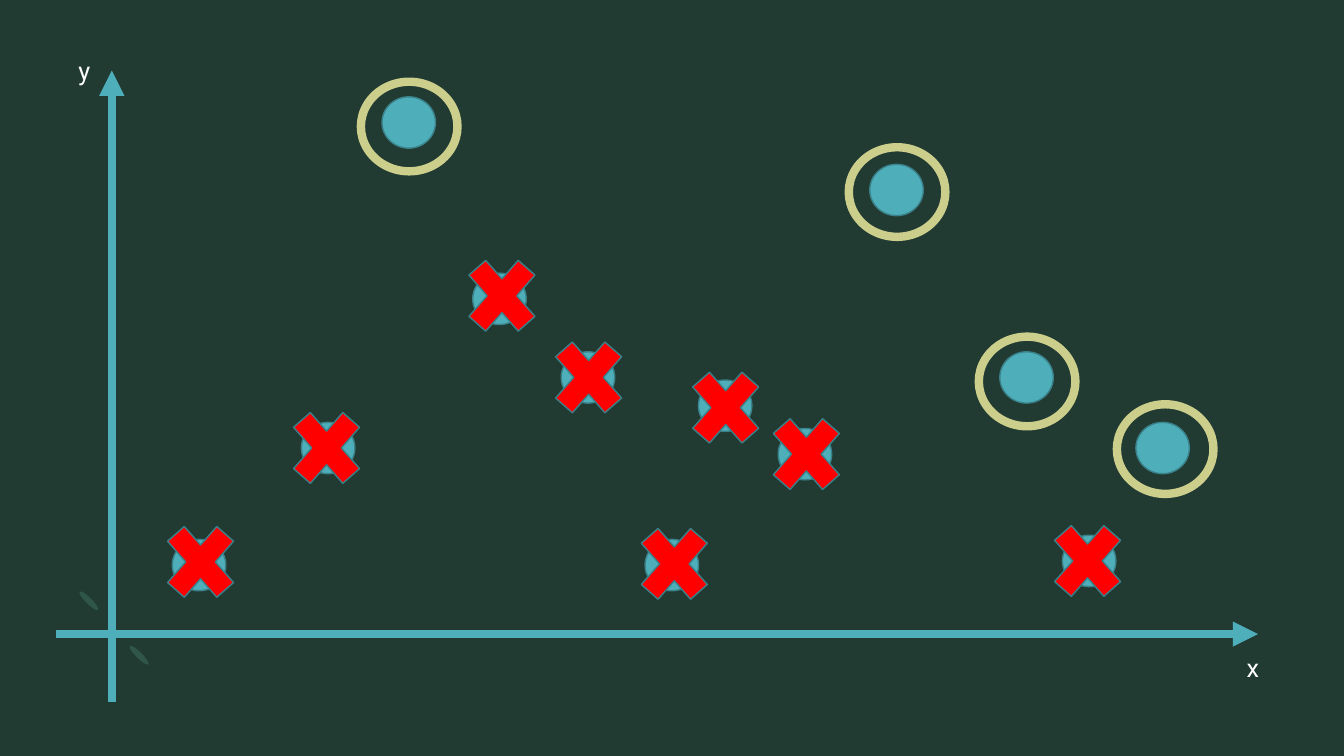
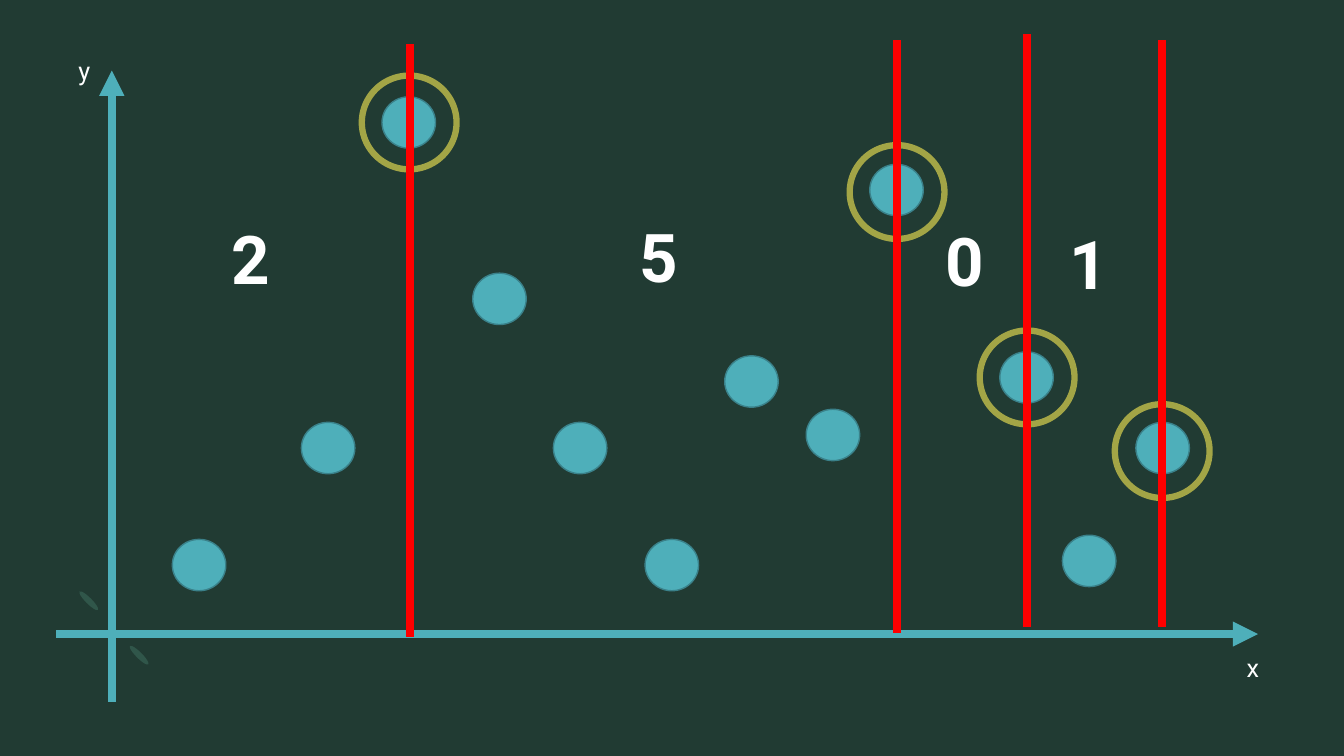
from lxml import etree
from pptx import Presentation
from pptx import util as u
from pptx.dml.color import RGBColor
from pptx.enum import shapes, text
from pptx.oxml import ns

PEAKS = [(292, 87.5), (640.4, 135.7), (733.3, 269.6), (830.5, 320)]
LOW_POINTS = [(142.2, 403.6), (234.4, 320), (356.8, 213.5), (479.9, 403.6), (778, 400.7)]


def color(value):
    return RGBColor.from_string(value)


class Plot:
    FONT = "Roboto"
    BACKGROUND = "213B33"
    WHITE = "FFFFFF"
    TEAL = "4EAFBA"
    DARK_TEAL = "3A818A"
    PALE_YELLOW = "CCCE8B"
    OLIVE = "A3A546"
    RED = "FF0000"
    LEAF = "30564A"
    THICK = 6

    def __init__(self):
        self.presentation = Presentation()
        self.presentation.slide_width = u.Pt(960)
        self.presentation.slide_height = u.Pt(540)
        fill = self.presentation.slide_master.background.fill
        fill.solid()
        fill.fore_color.rgb = color(self.BACKGROUND)
        self.slide = None

    def new_slide(self):
        self.slide = self.presentation.slides.add_slide(self.presentation.slide_layouts[6])
        for center in [(63.4, 429.1), (99.4, 468)]:
            self.shape("OVAL", center, (4.3, 18.7), fill=self.LEAF).rotation = 135
        self.line((79.9, 501.1), (79.9, 50.4), self.TEAL, arrow=True)
        self.line((40.3, 452.9), (898.6, 452.9), self.TEAL, arrow=True)
        self.label("x", 883.4, 462.2)
        self.label("y", 49, 36)

    def shape(self, kind, center, size, fill=None, outline=None, weight=1):
        (x, y), (width, height) = center, size
        shape = self.slide.shapes.add_shape(
            shapes.MSO_SHAPE[kind],
            u.Pt(x - width / 2), u.Pt(y - height / 2), u.Pt(width), u.Pt(height))
        shape.shadow.inherit = False
        if fill:
            shape.fill.solid()
            shape.fill.fore_color.rgb = color(fill)
        else:
            shape.fill.background()
        if outline:
            shape.line.color.rgb = color(outline)
            shape.line.width = u.Pt(weight)
        else:
            shape.line.fill.background()
        return shape

    def dot(self, center):
        self.shape("OVAL", center, (38.2, 36.7), self.TEAL, self.DARK_TEAL)

    def cross(self, center):
        self.shape("MATH_MULTIPLY", center, (67.7, 77), self.RED, self.DARK_TEAL)

    def ring(self, center, size, outline, weight):
        self.shape("OVAL", center, size, outline=outline, weight=weight)

    def line(self, start, end, stroke, arrow=False):
        points = [u.Pt(value) for value in (*start, *end)]
        connector = self.slide.shapes.add_connector(shapes.MSO_CONNECTOR.STRAIGHT, *points)
        connector.line.color.rgb = color(stroke)
        connector.line.width = u.Pt(self.THICK)
        properties = connector.element.spPr
        if arrow:
            outline = properties.find(ns.qn("a:ln"))
            etree.SubElement(outline, ns.qn("a:tailEnd"), type="triangle")
        etree.SubElement(properties, ns.qn("a:effectLst"))

    def label(self, content, left, top, width=31, height=28.8, size=18, bold=False):
        box = self.slide.shapes.add_textbox(u.Pt(left), u.Pt(top), u.Pt(width), u.Pt(height))
        frame = box.text_frame
        frame.text = content
        frame.word_wrap = True
        frame.auto_size = text.MSO_AUTO_SIZE.SHAPE_TO_FIT_TEXT
        font = frame.paragraphs[0].runs[0].font
        font.name = self.FONT
        font.size = u.Pt(size)
        font.bold = bold
        font.color.rgb = color(self.WHITE)

    def count(self, content, left, top):
        self.label(content, left, top, 38.9, 65.5, size=48, bold=True)


def build_maxima_slide(plot):
    plot.new_slide()
    for center in PEAKS + LOW_POINTS + [(420, 269.6), (518, 289.8), (575, 324.4)]:
        plot.dot(center)
    for center in [(143.3, 401.4), (233.3, 320), (358.6, 211.3), (420.5, 269.6),
                   (481.7, 402.8), (518.4, 291.2), (576, 324.4), (776.9, 400.7)]:
        plot.cross(center)
    for center in [(292.3, 90.4), (640.8, 137.2), (733.7, 272.5), (832.3, 320.8)]:
        plot.ring(center, (69, 64), plot.PALE_YELLOW, 6)


def build_strips_slide(plot):
    plot.new_slide()
    for center in PEAKS + LOW_POINTS + [(414.4, 320), (536.8, 272.5), (595, 310.7)]:
        plot.dot(center)
    for center in [(292.3, 87.5), (640.8, 137.2), (733.7, 269.6), (830.2, 322.2)]:
        plot.ring(center, (67.7, 67), plot.OLIVE, 4.5)
    for x, top, bottom in [(293, 31.7, 455), (640.8, 28.8, 452.2),
                           (733.7, 24.5, 447.8), (830.2, 28.8, 447.8)]:
        plot.line((x, top), (x, bottom), plot.RED)
    for content, left, top in [("2", 158.4, 151.9), ("5", 450, 150.5),
                               ("0", 668.2, 153.4), ("1", 756.7, 155.5)]:
        plot.count(content, left, top)


def main():
    plot = Plot()
    build_maxima_slide(plot)
    build_strips_slide(plot)
    plot.presentation.save("out.pptx")


if __name__ == "__main__":
    main()
